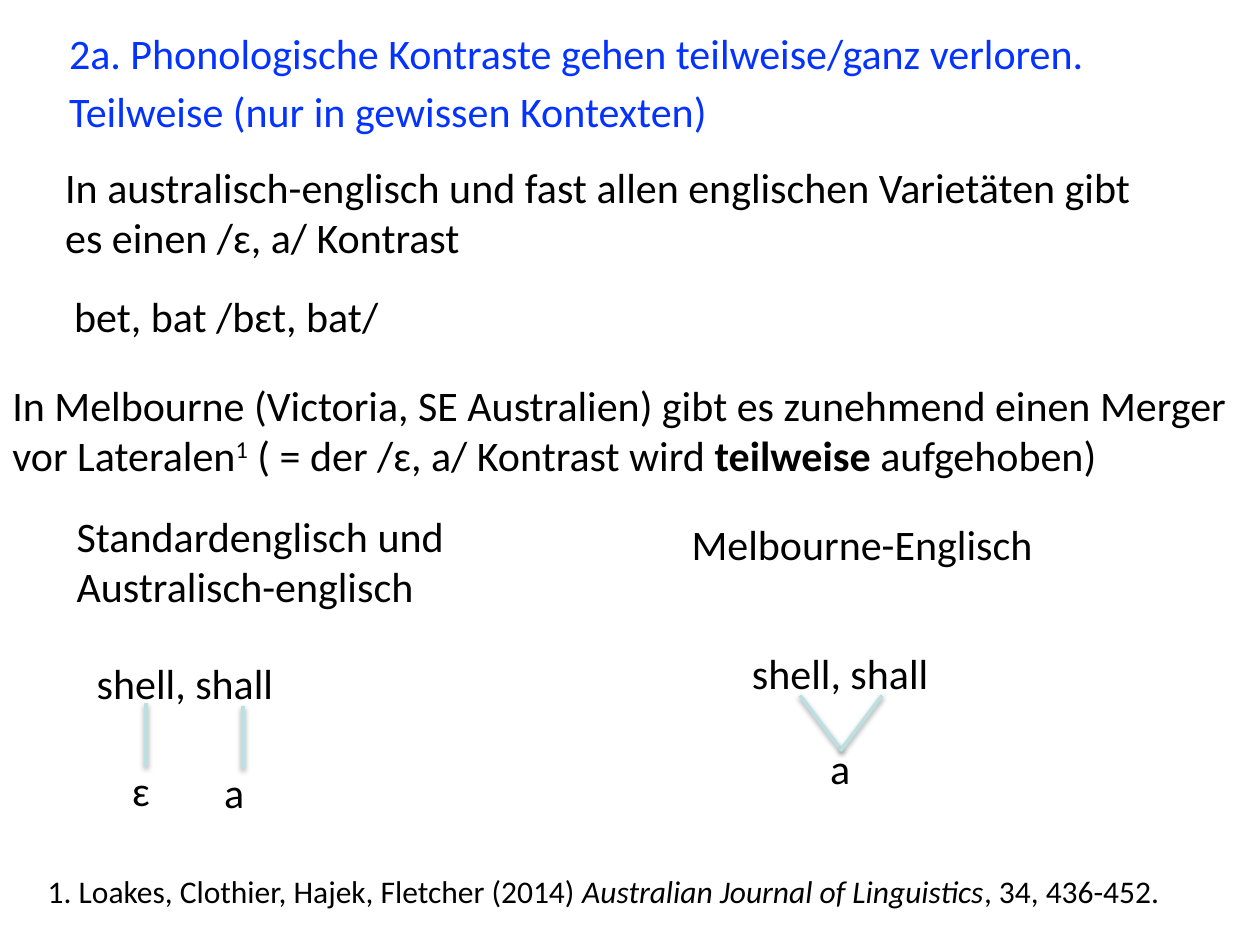
from dataclasses import dataclass

from lxml import etree
from pptx import Presentation
from pptx import util as u
from pptx.dml.color import RGBColor
from pptx.enum import shapes, text
from pptx.oxml import ns

BLACK = RGBColor(0x00, 0x00, 0x00)
BLUE = RGBColor(0x04, 0x32, 0xFF)
PALE_TEAL = RGBColor(0xBB, 0xE0, 0xE3)
FONT = "Calibri"


@dataclass(frozen=True)
class Span:
    """A piece of text with its own emphasis."""
    words: str
    bold: bool = False
    italic: bool = False
    superscript: bool = False


@dataclass(frozen=True)
class Passage:
    """A text box; lengths in points."""
    left: float
    top: float
    width: float
    height: float
    spans: tuple[Span, ...]
    size: float = 24
    color: RGBColor = BLACK
    wrap: bool = False


@dataclass(frozen=True)
class Link:
    """A line from a vowel letter to its phoneme; lengths in points."""
    x1: float
    y1: float
    x2: float
    y2: float


def line_of(left: float, top: float, width: float, words: str,
            color: RGBColor = BLACK) -> Passage:
    return Passage(left, top, width, 36.3, (Span(words),), color=color)


def block_of(left: float, top: float, width: float, *spans: Span) -> Passage:
    return Passage(left, top, width, 65.4, spans, wrap=True)


PASSAGES = (
    # Heading
    line_of(32.4, 12.2, 599.8, "2a. Phonologische Kontraste gehen teilweise/ganz verloren.", BLUE),
    line_of(32.4, 45.4, 382.3, "Teilweise (nur in gewissen Kontexten)", BLUE),
    # Explanation
    block_of(30.2, 88.6, 623.5,
             Span("In australisch-englisch und fast allen englischen Varietäten "
                  "gibt es einen /ɛ, a/ Kontrast")),
    line_of(35.3, 162.7, 190.1, "bet, bat /bɛt, bat/"),
    block_of(0, 213.1, 720,
             Span("In Melbourne (Victoria, SE Australien) gibt es zunehmend "
                  "einen Merger vor Lateralen"),
             Span("1", superscript=True),
             Span(" ( = der /ɛ, a/ Kontrast wird "),
             Span("teilweise", bold=True),
             Span(" aufgehoben)")),
    # Standard and Australian English
    block_of(36.7, 288, 272.2, Span("Standardenglisch und Australisch-englisch")),
    line_of(48.2, 372.2, 116.6, "shell, shall"),
    line_of(68.4, 433.4, 24.5, "ɛ"),
    line_of(121, 434.2, 25.9, "a"),
    # Melbourne English
    line_of(388.1, 293, 211.7, "Melbourne-Englisch"),
    line_of(467.3, 420.5, 25.9, "a"),
    line_of(422.6, 366.5, 116.6, "shell, shall"),
    # Reference
    Passage(20.2, 494.6, 679.7, 29.1,
            (Span("1. Loakes, Clothier, Hajek, Fletcher (2014) "),
             Span("Australian Journal of Linguistics", italic=True),
             Span(", 34, 436-452.")),
            size=18, wrap=True),
)

SEPARATE_LINKS = (Link(83.5, 401.8, 83.5, 437.8), Link(139, 403.2, 139, 439.2))
MERGED_LINKS = (Link(481, 429.1, 457.2, 397.4), Link(480.2, 429.1, 504, 397.4))


def draw_passage(slide, passage: Passage) -> None:
    box = slide.shapes.add_textbox(u.Pt(passage.left), u.Pt(passage.top),
                                   u.Pt(passage.width), u.Pt(passage.height))
    frame = box.text_frame
    frame.word_wrap = passage.wrap
    frame.auto_size = text.MSO_AUTO_SIZE.SHAPE_TO_FIT_TEXT
    for span in passage.spans:
        run = frame.paragraphs[0].add_run()
        run.text = span.words
        run.font.name = FONT
        run.font.size = u.Pt(passage.size)
        run.font.color.rgb = passage.color
        run.font.bold = span.bold
        run.font.italic = span.italic
        if span.superscript:
            run._r.get_or_add_rPr().set("baseline", "30000")


def draw_link(container, link: Link) -> None:
    connector = container.add_connector(
        shapes.MSO_CONNECTOR.STRAIGHT,
        u.Pt(link.x1), u.Pt(link.y1), u.Pt(link.x2), u.Pt(link.y2))
    connector.line.color.rgb = PALE_TEAL
    connector.line.width = u.Pt(2)
    # Soft shadow straight below the line
    effects = etree.SubElement(connector._element.spPr, ns.qn("a:effectLst"))
    shadow = etree.SubElement(effects, ns.qn("a:outerShdw"),
                              blurRad=str(u.Pt(3.15)), dist=str(u.Pt(1.57)),
                              dir="5400000", rotWithShape="0")
    tint = etree.SubElement(shadow, ns.qn("a:srgbClr"), val=str(BLACK))
    etree.SubElement(tint, ns.qn("a:alpha"), val="38000")


def main() -> None:
    deck = Presentation()
    deck.slide_width, deck.slide_height = u.Pt(720), u.Pt(540)
    slide = deck.slides.add_slide(deck.slide_layouts[6])
    for passage in PASSAGES:
        draw_passage(slide, passage)
    for link in SEPARATE_LINKS:
        draw_link(slide.shapes, link)
    # The two vowels that fall together form one figure
    merger = slide.shapes.add_group_shape()
    for link in MERGED_LINKS:
        draw_link(merger.shapes, link)
    deck.save("out.pptx")


if __name__ == "__main__":
    main()
